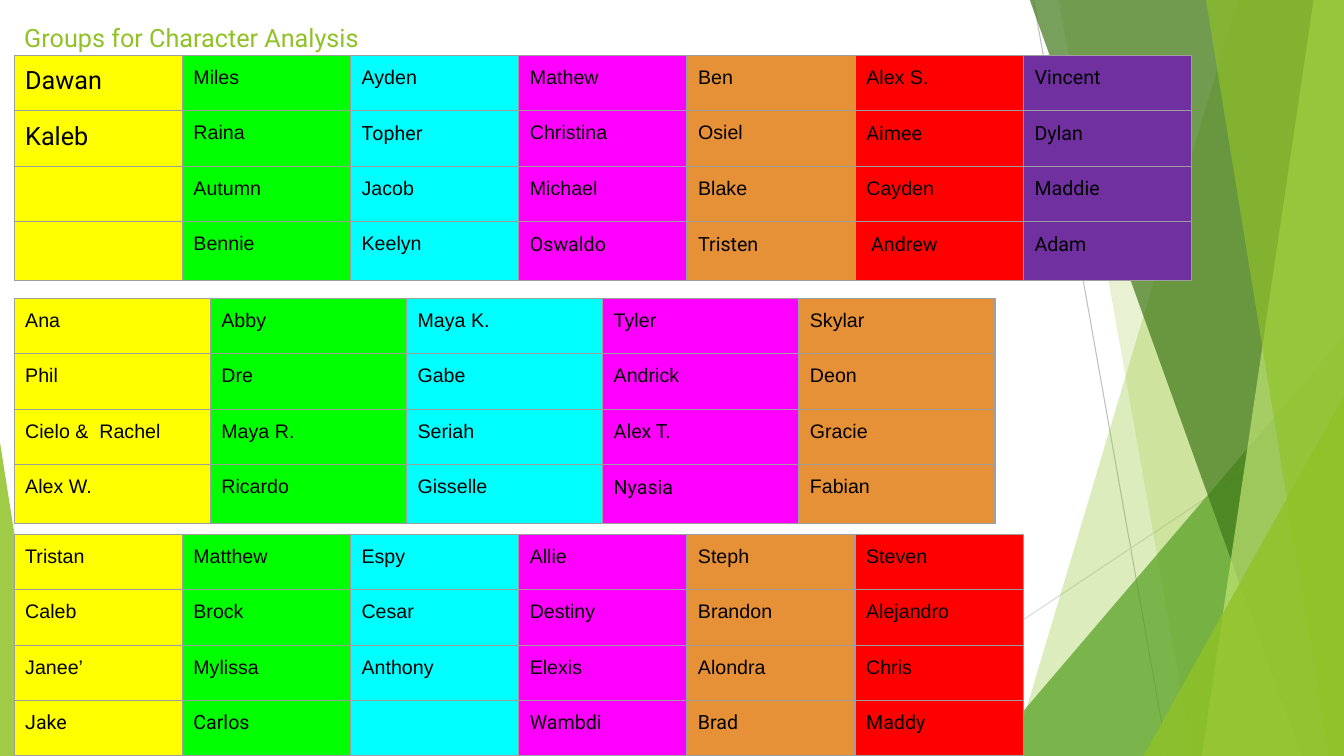
import pptx
import pptx.util
import pptx.dml.color
import pptx.enum.shapes
import pptx.enum.text
import pptx.oxml.ns
import lxml.etree

Inches = pptx.util.Inches
Pt = pptx.util.Pt
RGBColor = pptx.dml.color.RGBColor

BLACK = RGBColor(0x00, 0x00, 0x00)
LIME = RGBColor(0x90, 0xC2, 0x26)
GREEN = RGBColor(0x54, 0xA0, 0x21)
FOREST = RGBColor(0x3F, 0x78, 0x19)
PALE = RGBColor(0xC0, 0xE4, 0x74)
GRAY = RGBColor(0xBF, 0xBF, 0xBF)
SILVER = RGBColor(0xD9, 0xD9, 0xD9)
BORDER = RGBColor(0x9E, 0x9E, 0x9E)
GROUPS = [
    RGBColor(0xFF, 0xFF, 0x00),
    RGBColor(0x00, 0xFF, 0x00),
    RGBColor(0x00, 0xFF, 0xFF),
    RGBColor(0xFF, 0x00, 0xFF),
    RGBColor(0xE6, 0x91, 0x38),
    RGBColor(0xFF, 0x00, 0x00),
    RGBColor(0x70, 0x30, 0xA0),
]


def add_node(parent, tag, **attrs):
    return lxml.etree.SubElement(parent, pptx.oxml.ns.qn(tag), **attrs)


def tint(shape, color, alpha):
    """Fill a shape with a see-through colour; alpha is percent opacity."""
    shape.shadow.inherit = False
    shape.line.fill.background()
    shape.fill.solid()
    shape.fill.fore_color.rgb = color
    tone = shape.fill._xPr.find(".//" + pptx.oxml.ns.qn("a:srgbClr"))
    add_node(tone, "a:alpha", val=str(alpha * 1000))


deck = pptx.Presentation()
deck.slide_width = Inches(13.33)
deck.slide_height = Inches(7.5)
slide = deck.slides.add_slide(deck.slide_layouts[5])
shapes = slide.shapes

# Title
title = shapes.title
title.left, title.top = Inches(0.14), Inches(0.15)
title.width, title.height = Inches(9.4), Inches(0.45)
frame = title.text_frame
frame.text = "Groups for Character Analysis"
frame.word_wrap = True
frame.auto_size = pptx.enum.text.MSO_AUTO_SIZE.NONE
frame.vertical_anchor = pptx.enum.text.MSO_ANCHOR.MIDDLE
heading = frame.paragraphs[0]
heading.alignment = pptx.enum.text.PP_ALIGN.LEFT
heading.font.name = "Roboto"
heading.font.size = Pt(18)
heading.font.color.rgb = LIME

# Thin lines behind the green facets
for x1, y1, x2, y2, color in [
    (10.25, 0, 11.58, 7.5, GRAY),
    (13.33, 4.03, 8.12, 7.5, SILVER),
]:
    line = shapes.add_connector(
        pptx.enum.shapes.MSO_CONNECTOR.STRAIGHT,
        Inches(x1), Inches(y1), Inches(x2), Inches(y2))
    line.line.color.rgb = color
    line.line.width = Pt(0.75)
    add_node(line._element.spPr, "a:effectLst")

# Bands give the top and bottom x of their left edge;
# peaks give left, top, width and the place of the tip.
facets = [
    ("band", (12.28, 10.04), LIME, 30),
    ("band", (10.5, 11.83), LIME, 20),
    ("peak", (9.77, 3.33, 3.56, 1), GREEN, 72),
    ("band", (10.21, 12.91), FOREST, 70),
    ("band", (13.03, 11.92), PALE, 70),
    ("band", (11.96, 13.18), LIME, 65),
    ("peak", (11.34, 3.93, 1.99, 1), LIME, 80),
    ("peak", (0, 4.39, 0.49, 0), LIME, 85),
]
for kind, place, color, alpha in facets:
    if kind == "band":
        head, foot = place
        pen = shapes.build_freeform(Inches(head), Inches(-0.01))
        pen.add_line_segments([
            (Inches(13.33), Inches(-0.01)),
            (Inches(13.33), Inches(7.5)),
            (Inches(foot), Inches(7.5)),
        ], close=True)
        facet = pen.convert_to_shape()
    else:
        left, top, width, tip = place
        facet = shapes.add_shape(
            pptx.enum.shapes.MSO_SHAPE.ISOSCELES_TRIANGLE,
            Inches(left), Inches(top), Inches(width), Inches(7.5 - top))
        facet.adjustments[0] = tip
    tint(facet, color, alpha)

# Class lists: top, width, last row height, names by row
classes = [
    (0.55, 11.68, 0.58, [
        ["Dawan", "Miles", "Ayden", "Mathew", "Ben", "Alex S.", "Vincent"],
        ["Kaleb", "Raina", "Topher", "Christina", "Osiel", "Aimee", "Dylan"],
        ["", "Autumn", "Jacob", "Michael", "Blake", "Cayden", "Maddie"],
        ["", "Bennie", "Keelyn", "Oswaldo", "Tristen", " Andrew", "Adam"],
    ]),
    (2.96, 9.73, 0.58, [
        ["Ana", "Abby", "Maya K.", "Tyler", "Skylar"],
        ["Phil", "Dre", "Gabe", "Andrick", "Deon"],
        ["Cielo &  Rachel", "Maya R.", "Seriah", "Alex T.", "Gracie"],
        ["Alex W.", "Ricardo", "Gisselle", "Nyasia", "Fabian"],
    ]),
    (5.3, 10.01, 0.55, [
        ["Tristan", "Matthew", "Espy", "Allie", "Steph", "Steven"],
        ["Caleb", "Brock", "Cesar", "Destiny", "Brandon", "Alejandro"],
        ["Janee’", "Mylissa", "Anthony", "Elexis", "Alondra", "Chris"],
        ["Jake", "Carlos", "", "Wambdi", "Brad", "Maddy"],
    ]),
]
LARGE = {"Dawan", "Kaleb"}
ROBOTO = LARGE | {
    "Vincent", "Topher", "Aimee", "Dylan", "Maddie", "Oswaldo", "Tristen",
    " Andrew", "Adam", "Alex T.", "Nyasia", "Jake", "Carlos", "Wambdi",
    "Brad", "Maddy",
}

for top, width, last, names in classes:
    count = len(names[0])
    table = shapes.add_table(
        len(names), count, Inches(0.14), Inches(top),
        Inches(width), Inches(0.55 * 3 + last)).table
    table.first_row = False
    table.horz_banding = False
    for column in table.columns:
        column.width = Inches(width / count)
    for row in table.rows:
        row.height = Inches(0.55)
    table.rows[len(names) - 1].height = Inches(last)

    for r, row in enumerate(names):
        for c, name in enumerate(row):
            cell = table.cell(r, c)
            cell.margin_left = cell.margin_right = Inches(0.11)
            cell.margin_top = cell.margin_bottom = Inches(0.11)
            cell.text = name
            font = cell.text_frame.paragraphs[0].font
            font.name = "Roboto" if name in ROBOTO else "Arial"
            font.size = Pt(18 if name in LARGE else 14)
            font.color.rgb = BLACK
            props = cell._tc.get_or_add_tcPr()
            for side in ("a:lnL", "a:lnR", "a:lnT", "a:lnB"):
                edge = add_node(props, side, w=str(Pt(1)))
                fill = add_node(edge, "a:solidFill")
                add_node(fill, "a:srgbClr", val=str(BORDER))
            cell.fill.solid()
            cell.fill.fore_color.rgb = GROUPS[c]

deck.save("out.pptx")
